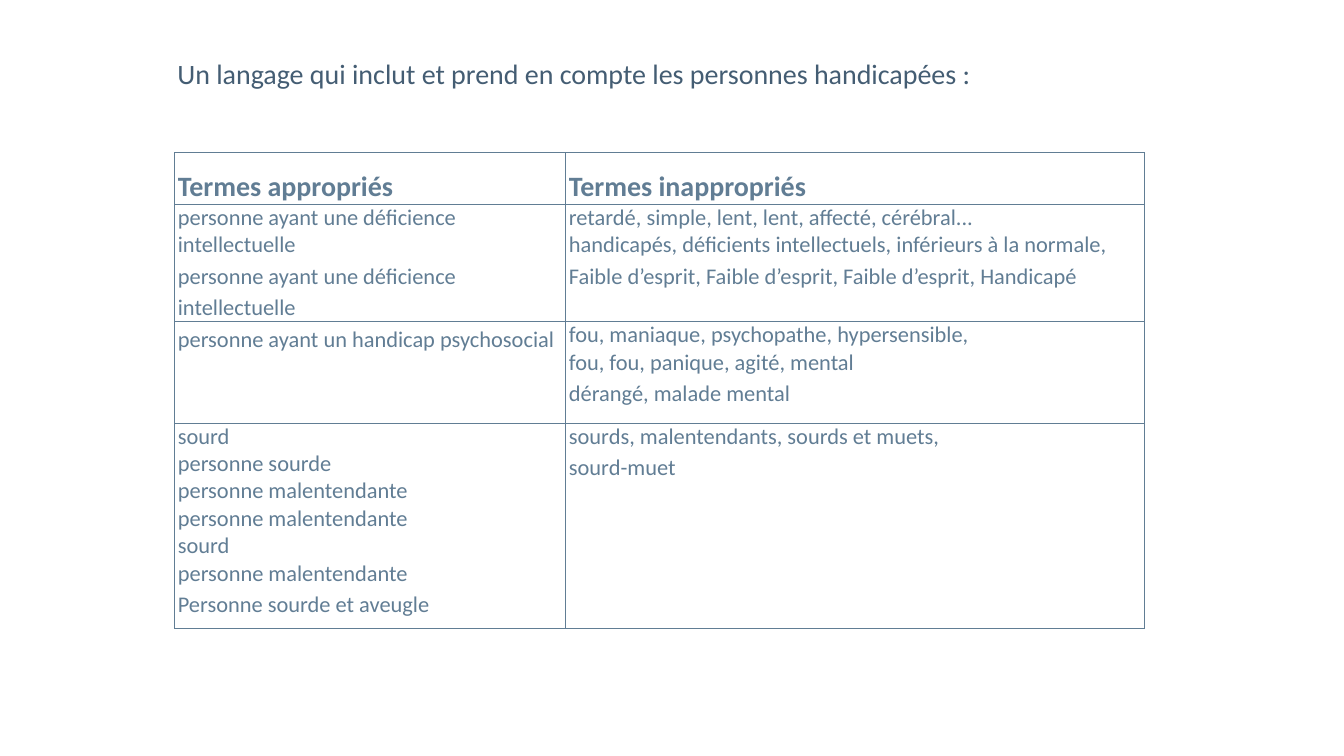
"""Build a slide with a table of fitting and unfitting terms."""
from lxml import etree
from pptx import Presentation
from pptx.dml.color import RGBColor
from pptx.enum.text import PP_ALIGN
from pptx.oxml.ns import qn
from pptx.util import Pt

PX = 9144
FONT = "Calibri"
NAVY = RGBColor(0x44, 0x5D, 0x73)
STEEL = RGBColor(0x61, 0x7D, 0x94)
LEFT = PP_ALIGN.LEFT
JUST = PP_ALIGN.JUSTIFY

COLS = [776, 1148]
ROWS = [91, 208, 201, 408]
HEADS = ["Termes appropriés", "Termes inappropriés"]
TERMS = [
    (["personne ayant une déficience intellectuelle",
      "personne ayant une déficience intellectuelle"],
     ["retardé, simple, lent, lent, affecté, cérébral...",
      "handicapés, déficients intellectuels, inférieurs à la normale,",
      "Faible d’esprit, Faible d’esprit, Faible d’esprit, Handicapé"]),
    (["personne ayant un handicap psychosocial"],
     ["fou, maniaque, psychopathe, hypersensible,",
      "fou, fou, panique, agité, mental",
      "dérangé, malade mental"]),
    (["sourd",
      "personne sourde",
      "personne malentendante",
      "personne malentendante",
      "sourd",
      "personne malentendante",
      "Personne sourde et aveugle"],
     ["sourds, malentendants, sourds et muets,",
      "sourd-muet"]),
]


def px(num):
    return num * PX


def write(frame, lines, size, color, bold=False, last=1.0, align=LEFT):
    for i, line in enumerate(lines):
        para = frame.paragraphs[0] if i == 0 else frame.add_paragraph()
        para.alignment = align
        para.line_spacing = last if i == len(lines) - 1 else 1.0
        run = para.add_run()
        run.text = line
        run.font.name = FONT
        run.font.size = Pt(size)
        run.font.bold = bold
        run.font.color.rgb = color


def add_edges(cell):
    props = cell._tc.get_or_add_tcPr()
    for i, side in enumerate(("lnL", "lnR", "lnT", "lnB")):
        edge = etree.Element(qn("a:" + side), w=str(Pt(1)))
        fill = etree.SubElement(edge, qn("a:solidFill"))
        etree.SubElement(fill, qn("a:srgbClr"), val=str(STEEL))
        props.insert(i, edge)


def fill_cell(cell, lines, size, bold, last, align):
    cell.margin_left = cell.margin_right = px(7)
    cell.margin_top = cell.margin_bottom = 0
    cell.fill.background()
    add_edges(cell)
    write(cell.text_frame, lines, size, STEEL, bold, last, align)


def add_title(slide, text):
    box = slide.shapes.add_textbox(px(346), px(107), px(2175), px(82))
    frame = box.text_frame
    frame.word_wrap = True
    frame.margin_left = frame.margin_right = px(6)
    frame.margin_top = frame.margin_bottom = px(6)
    write(frame, [text], 40, NAVY)


def add_terms(slide):
    table = slide.shapes.add_table(
        len(ROWS), len(COLS), px(346), px(303),
        px(sum(COLS)), px(sum(ROWS))).table
    table.first_row = table.horz_banding = False
    for col, width in zip(table.columns, COLS):
        col.width = px(width)
    for row, height in zip(table.rows, ROWS):
        row.height = px(height)
    for c, head in enumerate(HEADS):
        fill_cell(table.cell(0, c), [head], 40, True, 1.5, JUST)
    for r, pair in enumerate(TERMS, 1):
        for c, lines in enumerate(pair):
            align = LEFT if (r, c) == (1, 0) else JUST
            fill_cell(table.cell(r, c), lines, 32, False, 1.15, align)


def main():
    deck = Presentation()
    deck.slide_width = px(2667)
    deck.slide_height = px(1500)
    slide = deck.slides.add_slide(deck.slide_layouts[6])
    add_terms(slide)
    add_title(slide, "Un langage qui inclut et prend en compte "
                     "les personnes handicapées :")
    deck.save("out.pptx")


if __name__ == "__main__":
    main()
